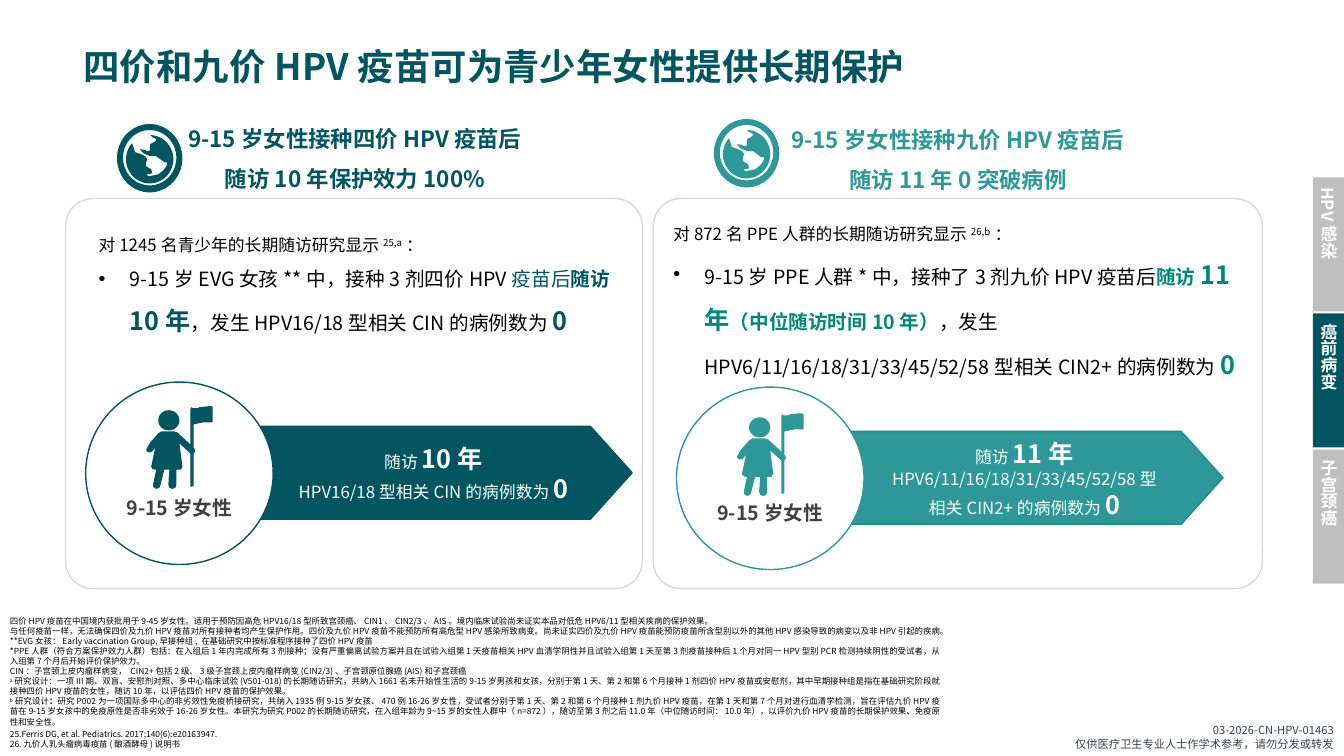
from math import cos, radians, sin

from lxml import etree
from pptx import Presentation
from pptx.dml.color import RGBColor
from pptx.enum.shapes import MSO_SHAPE
from pptx.enum.text import MSO_ANCHOR, MSO_AUTO_SIZE, PP_ALIGN
from pptx.oxml.ns import qn
from pptx.util import Inches, Pt

RECT, ROUND = MSO_SHAPE.RECTANGLE, MSO_SHAPE.ROUNDED_RECTANGLE
PLATE, OVAL = MSO_SHAPE.PENTAGON, MSO_SHAPE.OVAL
LEFT, CENTER, RIGHT, JUSTIFY = PP_ALIGN.LEFT, PP_ALIGN.CENTER, PP_ALIGN.RIGHT, PP_ALIGN.JUSTIFY
TOP, MIDDLE, GROW = MSO_ANCHOR.TOP, MSO_ANCHOR.MIDDLE, MSO_AUTO_SIZE.SHAPE_TO_FIT_TEXT

COLORS = {"white": "FFFFFF", "black": "000000", "border": "D9D9D9", "tab": "BFBFBF",
          "dark": "015560", "teal": "2E9898", "edge": "1F8C87", "accent": "00877B",
          "label": "404040", "code": "37424A"}


def arc(cx, cy, rx, ry, start=0, end=350):
    angles = [radians(start + (end - start) * i / 35) for i in range(36)]
    return [(cx + rx * cos(a), cy + ry * sin(a)) for a in angles]


COAST = [(16, 22), (18, 28), (24, 30), (28, 32), (30, 35), (29, 38), (29, 42), (34, 45),
         (35, 49), (30, 50), (30, 51), (32, 52), (36, 51), (41, 50), (46, 46), (49, 42),
         (50, 38), (47, 38), (43, 35), (39, 32), (33, 32), (26, 29), (23, 25), (29, 26),
         (29, 27), (32, 27), (33, 25), (33, 20), (37, 18), (39, 16), (39, 15), (35, 13)]
GLOBE = [arc(32.5, 34, 32.5, 34), arc(32.5, 33.5, 26.5, 27.5),
         arc(32.5, 35, 23.5, 24, -88, 222) + COAST]
GIRL = [arc(22.5, 14, 10.5, 10),
        [(62, 0), (65, 0), (66, 1), (66, 16), (57, 16), (47, 18), (47, 41), (48, 42),
         (48.5, 44), (48, 46), (47, 47), (47, 79), (45, 80), (44, 79), (44, 47), (43, 46),
         (33, 37), (36, 60), (35, 62), (34, 63), (30, 63), (30, 78), (29, 81), (26, 82),
         (23, 81), (22, 78), (23, 63), (18, 63), (14, 79), (13, 81), (10, 82), (7, 80),
         (7, 77), (10, 63), (8, 63), (6, 62), (5, 60), (9, 41), (6, 45), (3, 46), (1, 45),
         (0, 43), (1, 41), (4, 36), (12, 27), (15, 25), (28, 25), (31, 26), (44, 38),
         (44, 3), (45, 1), (46, 2), (51, 2), (53, 1)]]

BIG, BODY, SUP = {"size": 18, "bold": True}, {"size": 14}, {"base": 30}
DARK, ACCENT = {"size": 14, "color": "dark"}, {"size": 14, "color": "accent", "bold": True}
BIG_DARK, BIG_ACCENT = {**BIG, "color": "dark"}, {**BIG, "color": "accent"}

FOOTNOTES = [
    ["四价HPV疫苗在中国境内获批用于9-45岁女性。适用于预防因高危HPV16/18型所致宫颈癌、CIN1、CIN2/3、AIS。境内临床试验尚未证实本品对低危HPV6/11型相关疾病的保护效果。"],
    ["与任何疫苗一样，无法确保四价及九价HPV疫苗对所有接种者均产生保护作用。四价及九价HPV疫苗不能预防所有高危型HPV感染所致病变。尚未证实四价及九价HPV疫苗能预防疫苗所含型别以外的其他HPV感染导致的病变以及非HPV引起的疾病。"],
    ["**EVG女孩：Early vaccination Group,早接种组, 在基础研究中按标准程序接种了四价HPV疫苗"],
    ["*PPE人群（符合方案保护效力人群）包括：在入组后1年内完成所有3剂接种；没有严重偏离试验方案并且在试验入组第1天疫苗相关HPV血清学阴性并且试验入组第1天至第3剂疫苗接种后1个月对同一HPV型别PCR检测持续阴性的受试者，从入组第7个月后开始评价保护效力。"],
    ["CIN：子宫颈上皮内瘤样病变， CIN2+包括2级、3级子宫颈上皮内瘤样病变(CIN2/3)、子宫颈原位腺癌(AIS)和子宫颈癌"],
    [("a", SUP), "研究设计：一项III期、双盲、安慰剂对照、多中心临床试验(V501-018)的长期随访研究，共纳入1661名未开始性生活的9-15岁男孩和女孩，分别于第1天、第2和第6个月接种1剂四价HPV疫苗或安慰剂，其中早期接种组是指在基础研究阶段就接种四价HPV疫苗的女性，随访10年，以评估四价HPV疫苗的保护效果。"],
    [("b", SUP), "研究设计", ("：", {"bold": True}), "研究P002为一项国际多中心的非劣效性免疫桥接研究，共纳入1935例9-15岁女孩、470例16-26岁女性，受试者分别于第1天、第2和第6个月接种1剂九价HPV疫苗，在第1天和第7个月对进行血清学检测，旨在评估九价HPV疫苗在9-15岁女孩中的免疫原性是否非劣效于16-26岁女性。本研究为研究P002的长期随访研究，在入组年龄为9~15岁的女性人群中（n=872），随访至第3剂之后11.0年（中位随访时间：10.0年），以评价九价HPV疫苗的长期保护效果、免疫原性和安全性。"]]

ARMS = [
    {"color": "dark", "edge": "dark", "circle": (0.85, 3.79), "girl": (1.45, 4.03),
     "globe": (1.16, 1.23), "head_box": (1, 1.08, 5.04, 0.86),
     "head": [["9-15岁女性接种四价HPV疫苗后"], ["随访10年保护效力100%"]],
     "study_box": (0.88, 2.18, 5.41, 1.26),
     "study": [["对1245名青少年的长期随访研究显示", ("25,a", SUP), "："],
               [("9-15岁EVG女孩**中，接种3剂四价HPV", BODY), ("疫苗后", DARK),
                ("随访", {**DARK, "bold": True}), ("10年", BIG_DARK),
                ("，发生HPV16/18型相关CIN的病例数为", BODY), ("0", BIG_DARK)]],
     "result_box": (2.71, 4.35, 3.18, 0.71),
     "result": [["随访", ("10年", BIG)], ["HPV16/18型相关CIN的病例数为", ("0", BIG)]]},
    {"color": "teal", "edge": "edge", "circle": (6.71, 3.84), "girl": (7.31, 4.1),
     "globe": (7.08, 1.18), "head_box": (7.62, 1.09, 3.76, 0.86),
     "head": [["9-15岁女性接种九价HPV疫苗后"], ["随访11年0突破病例"]],
     "study_box": (6.58, 2.07, 5.97, 1.66),
     "study": [["对872名PPE人群的长期随访研究显示", ("26,b", SUP), "："],
               [("9-15岁PPE人群*中，接种了3剂九价HPV疫苗后", BODY), ("随访", ACCENT),
                ("11年", BIG_ACCENT), ("（中位随访时间10年）", ACCENT),
                ("，发生HPV6/11/16/18/31/33/45/52/58型相关CIN2+的病例数为", BODY),
                ("0", BIG_ACCENT)]],
     "result_box": (8.57, 4.3, 3.18, 0.91),
     "result": [["随访", ("11年", BIG)], ["HPV6/11/16/18/31/33/45/52/58型"],
                ["相关CIN2+的病例数为", ("0", BIG)]]}]


class Deck:
    """Hold the style and the current slide."""

    def __init__(self, font):
        self.font = font
        self.prs = Presentation()
        self.prs.slide_width, self.prs.slide_height = Inches(13.33), Inches(7.5)
        self.s = self.prs.slides.add_slide(self.prs.slide_layouts[6])

    def paint(self, sp, fill, line=None):
        sp.shadow.inherit = False
        sp.fill.solid()
        sp.fill.fore_color.rgb = RGBColor.from_string(COLORS[fill])
        if line:
            sp.line.color.rgb = RGBColor.from_string(COLORS[line])
            sp.line.width = Pt(1)
        else:
            sp.line.fill.background()

    def shape(self, kind, box, fill, line=None, adj=None):
        sp = self.s.shapes.add_shape(kind, *map(Inches, box))
        self.paint(sp, fill, line)
        if adj is not None:
            sp.adjustments[0] = adj
        return sp

    def icon(self, origin, contours, fill):
        outlines = [[(x * 10, y * 10) for x, y in contour] for contour in contours]
        builder = self.s.shapes.build_freeform(*outlines[0][0], scale=Inches(1) / 1000)
        for i, points in enumerate(outlines):
            if i:
                builder.move_to(*points[0])
            builder.add_line_segments(points[1:], close=True)
        self.paint(builder.convert_to_shape(*map(Inches, origin)), fill)

    def run(self, p, text, style):
        r = p.add_run()
        r.text = text
        values = {"name": self.font, "size": Pt(style["size"]), "bold": style.get("bold", False)}
        for name, value in values.items():
            setattr(r.font, name, value)
        r.font.color.rgb = RGBColor.from_string(COLORS[style["color"]])
        rPr = r._r.get_or_add_rPr()
        rPr.find(qn("a:latin")).addnext(etree.Element(qn("a:ea"), typeface=self.font))
        if "base" in style:
            rPr.set("baseline", str(style["base"] * 1000))

    def fill_text(self, sp, paras, style, align=LEFT, anchor=TOP, spacing=None, bullets=()):
        tf = sp.text_frame
        tf.word_wrap, tf.vertical_anchor = True, anchor
        for i, runs in enumerate(paras):
            p = tf.add_paragraph() if i else tf.paragraphs[0]
            p.alignment, p.line_spacing = align, spacing
            if i in bullets:
                pPr = p._p.get_or_add_pPr()
                pPr.set("marL", str(Inches(0.31)))
                pPr.set("indent", str(-Inches(0.31)))
                etree.SubElement(pPr, qn("a:buFont"), typeface="Arial")
                etree.SubElement(pPr, qn("a:buChar"), char="•")
            for item in runs:
                text, extra = (item, {}) if isinstance(item, str) else item
                self.run(p, text, {**style, **extra})

    def text(self, box, paras, style, grow=True, **layout):
        sp = self.s.shapes.add_textbox(*map(Inches, box))
        self.fill_text(sp, paras, style, **layout)
        if grow:
            sp.text_frame.auto_size = GROW

    def tab(self, box, label, fill):
        sp = self.shape(RECT, box, fill)
        style = {"size": 12, "color": "white", "bold": True}
        self.fill_text(sp, [[label]], style, align=CENTER, anchor=MIDDLE)
        sp.text_frame._txBody.bodyPr.set("vert", "eaVert")


def main():
    deck = Deck("Noto Sans CJK SC")
    small = {"size": 6, "color": "black"}
    approval = [["03-2026-CN-HPV-01463"], ["仅供医疗卫生专业人士作学术参考，请勿分发或转发"]]
    deck.text((8.57, 7.13, 4.76, 0.37), approval, {"size": 8, "color": "code"}, align=RIGHT)
    for left, width in ((6.48, 6.04), (0.65, 5.72)):
        deck.shape(ROUND, (left, 1.97, width, 3.87), "white", "border", 0.07)
    deck.text((0, 6.06, 9.42, 1.11), FOOTNOTES, small, align=JUSTIFY)
    references = [["25.Ferris DG, et al. Pediatrics. 2017;140(6):e20163947."],
                  ["26.九价人乳头瘤病毒疫苗(酿酒酵母)说明书"]]
    deck.text((0, 7.18, 8.92, 0.3), references, small)
    for arm in ARMS:
        (x, y), color = arm["circle"], arm["color"]
        deck.text(arm["head_box"], arm["head"], {"size": 16, "color": color, "bold": True},
                  align=CENTER, anchor=MIDDLE, spacing=1.5)
        deck.text(arm["study_box"], arm["study"], {"size": 12, "color": "black"},
                  spacing=1.5, bullets=(1,))
        deck.shape(PLATE, (x + 1.67, y + 0.44, 3.75, 0.92), color, arm["edge"], 0.45)
        deck.shape(OVAL, (x, y, 1.86, 1.81), "white", color)
        deck.text((x + 0.21, y + 1.08, 1.44, 0.34), [["9-15岁女性"]],
                  {"size": 14, "color": "label", "bold": True}, align=CENTER)
        deck.text(arm["result_box"], arm["result"], {"size": 12, "color": "white"}, align=CENTER)
        deck.icon(arm["girl"], GIRL, color)
        deck.icon(arm["globe"], GLOBE, color)
    tabs = (("HPV感染", "tab"), ("癌前病变", "dark"), ("子宫颈癌", "tab"))
    for i, (label, fill) in enumerate(tabs):
        deck.tab((13.02, 1.76 + i * 1.35, 0.31, 1.33), label, fill)
    deck.text((0.73, 0.44, 11.77, 0.61), [["四价和九价HPV疫苗可为青少年女性提供长期保护"]],
              {"size": 26, "color": "dark", "bold": True}, grow=False, spacing=0.9)
    deck.prs.save("out.pptx")


if __name__ == "__main__":
    main()
